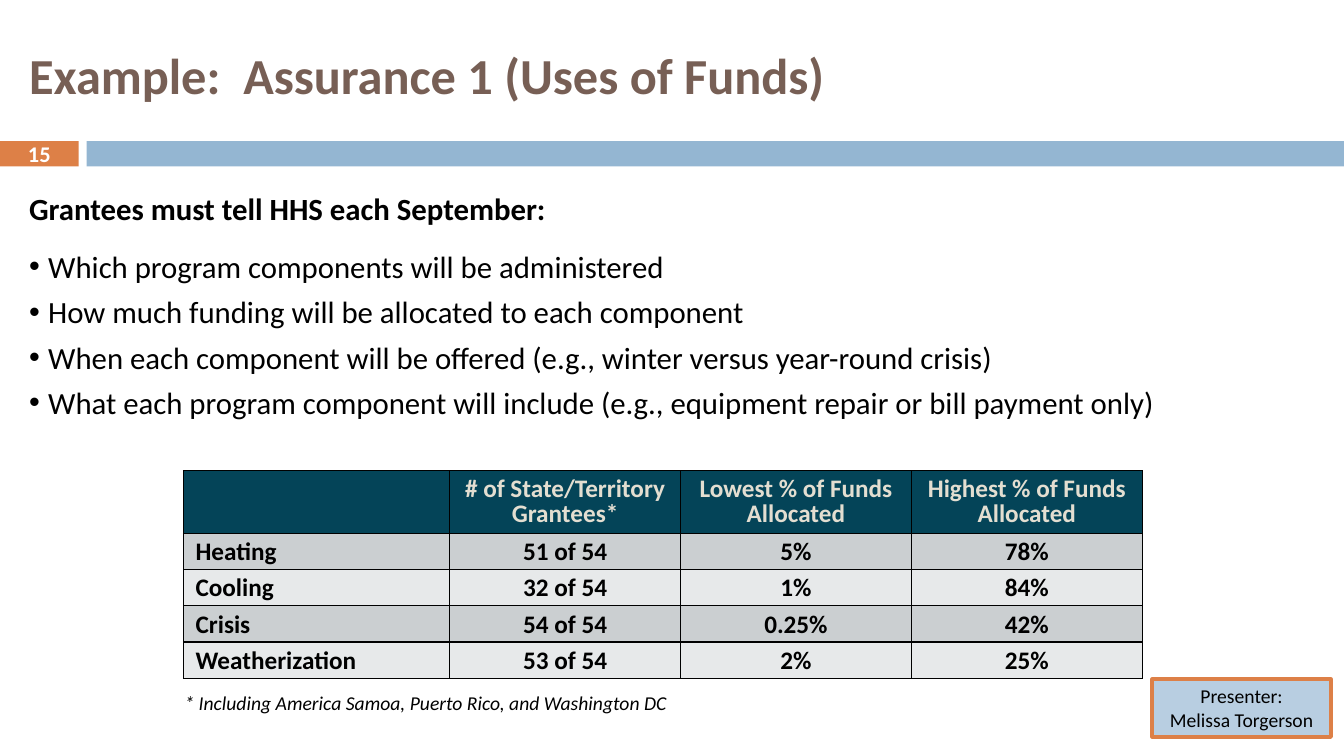
"""Build the slide on grantee assurances and the use of funds."""
from dataclasses import dataclass
from typing import Any

from lxml.etree import SubElement
from pptx import Presentation
from pptx.dml.color import RGBColor
from pptx.enum.shapes import MSO_SHAPE
from pptx.enum.text import MSO_ANCHOR as Anchor, PP_ALIGN as Align
from pptx.oxml.ns import qn
from pptx.util import Inches, Pt


@dataclass(frozen=True)
class Theme:
    """Colours, font and type sizes."""
    font: str = "Calibri"
    orange: str = "DD8047"
    blue: str = "94B6D2"
    brown: str = "775F55"
    black: str = "000000"
    white: str = "FFFFFF"
    cream: str = "E3DED1"
    header: str = "044458"
    bands: tuple[str, str] = ("CBCFD1", "E7E9EA")
    title_size: int = 36
    body_size: int = 22
    table_size: int = 18
    number_size: int = 16
    small_size: int = 14


THEME = Theme()


@dataclass(frozen=True)
class Box:
    """Position and size in inches."""
    left: float
    top: float
    width: float
    height: float

    def lengths(self) -> tuple[int, ...]:
        """Return the box as slide lengths."""
        return tuple(Inches(v) for v in (self.left, self.top, self.width, self.height))


@dataclass(frozen=True)
class Line:
    """One paragraph and its format."""
    text: str
    size: int
    color: str = THEME.black
    bold: bool = False
    italic: bool = False
    align: Align = Align.LEFT
    spacing: float = 1.0
    before: float = 0
    bullet: bool = False


@dataclass(frozen=True)
class Bar:
    """A plain filled rectangle."""
    box: Box
    color: str


@dataclass(frozen=True)
class TextBlock:
    """A text box with its lines."""
    box: Box
    lines: tuple[Line, ...]
    anchor: Anchor = Anchor.MIDDLE


BULLETS = (
    "Which program components will be administered",
    "How much funding will be allocated to each component",
    "When each component will be offered (e.g., winter versus year-round crisis)",
    "What each program component will include (e.g., equipment repair or bill payment only)",
)
BARS = (
    Bar(Box(0, 1.4, 0.78, 0.25), THEME.orange),
    Bar(Box(0.86, 1.4, 12.47, 0.25), THEME.blue),
)
TEXT_BLOCKS = (
    TextBlock(Box(0.19, 0.2, 11.89, 1.08), (
        Line("Example:  Assurance 1 (Uses of Funds)", THEME.title_size, THEME.brown, True),)),
    TextBlock(Box(0, 1.39, 0.78, 0.27), (
        Line("15", THEME.number_size, THEME.white, True, align=Align.CENTER),)),
    TextBlock(Box(0.19, 1.9, 12.77, 2.6), (
        Line("Grantees must tell HHS each September:", THEME.body_size, bold=True, spacing=0.8),
        *(Line(text, THEME.body_size, spacing=0.8, before=11.3 if index else 20.6, bullet=True)
          for index, text in enumerate(BULLETS))), Anchor.TOP),
)
TABLE_BOX = Box(1.82, 4.67, 9.51, 2.58)
COLUMN_WIDTHS = (2.64, 2.29, 2.29, 2.29)
ROW_HEIGHTS = (0.62, 0.36, 0.36, 0.36, 0.36, 0.5)
TABLE_ROWS = (
    ("", "# of State/Territory Grantees*", "Lowest % of Funds Allocated",
     "Highest % of Funds Allocated"),
    ("Heating", "51 of 54", "5%", "78%"),
    ("Cooling", "32 of 54", "1%", "84%"),
    ("Crisis", "54 of 54", "0.25%", "42%"),
    ("Weatherization", "53 of 54", "2%", "25%"),
)
FOOTNOTE = "* Including America Samoa, Puerto Rico, and Washington DC"
PRESENTER_BOX = Box(11.43, 6.74, 1.77, 0.57)
PRESENTER = ("Presenter:", "Melissa Torgerson")


def apply(target: Any, values: dict[str, Any]) -> None:
    """Set each attribute named in the format values."""
    for name, value in values.items():
        setattr(target, name, value)


def write_lines(frame: Any, lines: tuple[Line, ...]) -> None:
    """Fill a text frame with formatted paragraphs."""
    for index, line in enumerate(lines):
        paragraph = frame.add_paragraph() if index else frame.paragraphs[0]
        apply(paragraph, {"alignment": line.align, "line_spacing": line.spacing,
                          "space_before": Pt(line.before), "space_after": Pt(0)})
        run = paragraph.add_run()
        run.text = line.text
        apply(run.font, {"name": THEME.font, "size": Pt(line.size),
                         "bold": line.bold, "italic": line.italic})
        run.font.color.rgb = RGBColor.from_string(line.color)
        if line.bullet:
            properties = paragraph._p.get_or_add_pPr()
            properties.set("marL", str(Inches(0.19)))
            properties.set("indent", str(-Inches(0.19)))
            SubElement(properties, qn("a:buFont"), typeface="Arial")
            SubElement(properties, qn("a:buChar"), char="•")


def add_bar(slide: Any, bar: Bar) -> Any:
    """Draw a filled rectangle without outline or shadow."""
    shape = slide.shapes.add_shape(MSO_SHAPE.RECTANGLE, *bar.box.lengths())
    shape.shadow.inherit = False
    shape.fill.solid()
    shape.fill.fore_color.rgb = RGBColor.from_string(bar.color)
    shape.line.fill.background()
    return shape


def add_text(slide: Any, block: TextBlock) -> None:
    """Draw a wrapping text box."""
    frame = slide.shapes.add_textbox(*block.box.lengths()).text_frame
    apply(frame, {"word_wrap": True, "vertical_anchor": block.anchor})
    write_lines(frame, block.lines)


def format_cell(cell: Any, line: Line, fill: str | None, edges: str, left: float) -> None:
    """Set borders, fill, margins and text of a table cell."""
    properties = cell._tc.get_or_add_tcPr()
    for edge in "LRTB":
        border = SubElement(properties, qn(f"a:ln{edge}"), w=str(Pt(1)))
        if edge in edges:
            solid = SubElement(border, qn("a:solidFill"))
            SubElement(solid, qn("a:srgbClr"), val=THEME.black)
        else:
            SubElement(border, qn("a:noFill"))
    if fill:
        cell.fill.solid()
        cell.fill.fore_color.rgb = RGBColor.from_string(fill)
    else:
        cell.fill.background()
    apply(cell, {"margin_left": Inches(left), "margin_right": Inches(0.01),
                 "margin_top": Inches(0.01), "margin_bottom": 0,
                 "vertical_anchor": Anchor.MIDDLE})
    write_lines(cell.text_frame, (line,))


def add_funds_table(slide: Any) -> None:
    """Draw the table of allocated funds with its footnote row."""
    table = slide.shapes.add_table(
        len(ROW_HEIGHTS), len(COLUMN_WIDTHS), *TABLE_BOX.lengths()).table
    for column, width in zip(table.columns, COLUMN_WIDTHS):
        column.width = Inches(width)
    for row, height in zip(table.rows, ROW_HEIGHTS):
        row.height = Inches(height)
    for r, texts in enumerate(TABLE_ROWS):
        for c, text in enumerate(texts):
            line = Line(text, THEME.table_size, THEME.black if r else THEME.cream, True,
                        align=Align.CENTER if c else Align.LEFT, spacing=1.0 if r else 0.8)
            fill = THEME.bands[(r - 1) % 2] if r else THEME.header
            format_cell(table.cell(r, c), line, fill, "LRTB", 0.01 if c else 0.12)
    last_row, last_column = len(ROW_HEIGHTS) - 1, len(COLUMN_WIDTHS) - 1
    footnote = table.cell(last_row, 0)
    footnote.merge(table.cell(last_row, last_column))
    format_cell(footnote, Line(FOOTNOTE, THEME.small_size, italic=True), None, "T", 0.01)


def add_presenter(slide: Any) -> None:
    """Draw the outlined presenter label."""
    shape = add_bar(slide, Bar(PRESENTER_BOX, THEME.blue))
    color = shape.fill._xPr.find(qn("a:solidFill")).find(qn("a:srgbClr"))
    SubElement(color, qn("a:alpha"), val="66000")
    shape.line.color.rgb = RGBColor.from_string(THEME.orange)
    shape.line.width = Pt(3)
    apply(shape.text_frame, {"word_wrap": True, "vertical_anchor": Anchor.TOP})
    write_lines(shape.text_frame, tuple(
        Line(text, THEME.small_size, align=Align.CENTER) for text in PRESENTER))


def main() -> None:
    """Build and save the presentation."""
    presentation = Presentation()
    apply(presentation, {"slide_width": Inches(13.33), "slide_height": Inches(7.5)})
    slide = presentation.slides.add_slide(presentation.slide_layouts[6])
    for bar in BARS:
        add_bar(slide, bar)
    for block in TEXT_BLOCKS:
        add_text(slide, block)
    add_funds_table(slide)
    add_presenter(slide)
    presentation.save("out.pptx")


if __name__ == "__main__":
    main()
